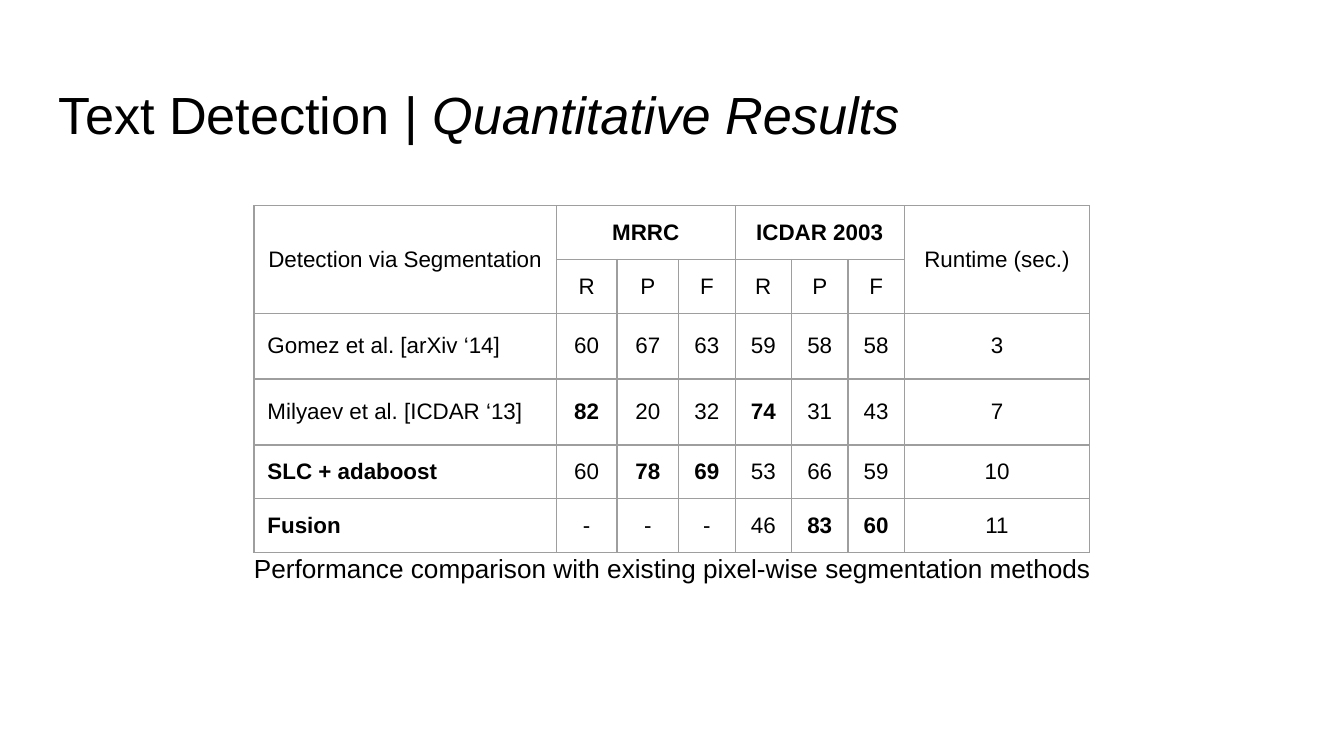
from pptx import Presentation
from pptx.dml.color import RGBColor as RGB
from pptx.enum.text import MSO_ANCHOR as ANCHOR, PP_ALIGN as ALIGN
from pptx.oxml import parse_xml
from pptx.oxml.ns import nsdecls
from pptx.text.text import Font
from pptx.util import Inches, Pt

COLORS = {"text": "000000", "border": "9E9E9E"}
FONT = "Arial"
PAD = Inches(0.1)
COLS = [2.25, 0.45, 0.46, 0.42, 0.42, 0.42, 0.42, 1.38]
ROWS = [0.34, 0.34, 0.49, 0.49, 0.34, 0.34]
THICK_SIDES = {3: "B", 4: "T"}  # the heavier rule separates earlier work from ours

# A leading * marks bold text
CELLS = [
    ["Detection via Segmentation", "*MRRC", "", "", "*ICDAR 2003", "", "", "Runtime (sec.)"],
    ["", "R", "P", "F", "R", "P", "F", ""],
    ["Gomez et al. [arXiv ‘14]", "60", "67", "63", "59", "58", "58", "3"],
    ["Milyaev et al. [ICDAR ‘13]", "*82", "20", "32", "*74", "31", "43", "7"],
    ["*SLC + adaboost", "60", "*78", "*69", "53", "66", "59", "10"],
    ["*Fusion", "-", "-", "-", "46", "*83", "*60", "11"],
]


def style(font, size, bold=False, italic=False):
    font.name, font.size, font.bold, font.italic = FONT, Pt(size), bold, italic
    font.color.rgb = RGB.from_string(COLORS["text"])


def add_text(x, y, w, h, size, align, anchor, parts):
    """Add a one-line text box; parts are (text, italic) pairs."""
    tf = s.shapes.add_textbox(Inches(x), Inches(y), Inches(w), Inches(h)).text_frame
    tf.word_wrap = True
    tf.vertical_anchor = anchor
    tf.margin_left = tf.margin_right = tf.margin_top = tf.margin_bottom = PAD
    p = tf.paragraphs[0]
    p.alignment = align
    for text, italic in parts:
        r = p.add_run()
        r.text = text
        style(r.font, size, italic=italic)


prs = Presentation()
prs.slide_width = Inches(10)
prs.slide_height = prs.slide_width * 9 // 16
s = prs.slides.add_slide(prs.slide_layouts[6])

add_text(0.34, 0.51, 9.32, 0.63, 28, ALIGN.LEFT, ANCHOR.TOP,
         [("Text Detection | ", False), ("Quantitative Results", True)])

table = s.shapes.add_table(len(ROWS), len(COLS), Inches(1.89), Inches(1.53),
                           Inches(sum(COLS)), Inches(sum(ROWS))).table
table.first_row = table.horz_banding = False
for col, width in zip(table.columns, COLS):
    col.width = Inches(width)
for row, height in zip(table.rows, ROWS):
    row.height = Inches(height)

for i, row in enumerate(CELLS):
    for j, text in enumerate(row):
        cell = table.cell(i, j)
        cell.vertical_anchor = ANCHOR.MIDDLE
        cell.margin_left = cell.margin_right = cell.margin_top = cell.margin_bottom = PAD
        cell.text_frame.text = text.lstrip("*")
        p = cell.text_frame.paragraphs[0]
        p.alignment = ALIGN.LEFT if j == 0 and i > 1 else ALIGN.CENTER
        for r in p.runs:
            style(r.font, 12, bold=text.startswith("*"))
        # The paragraph end counts towards the row height
        style(Font(p._p.get_or_add_endParaRPr()), 12)

        for side in "LRTB":
            width = Pt(1.5 if THICK_SIDES.get(i) == side else 0.75)
            cell._tc.get_or_add_tcPr().append(parse_xml(
                f'<a:ln{side} {nsdecls("a")} w="{width}"><a:solidFill>'
                f'<a:srgbClr val="{COLORS["border"]}"/></a:solidFill></a:ln{side}>'))
        cell.fill.background()

for top, left, bottom, right in [(0, 0, 1, 0), (0, 1, 0, 3), (0, 4, 0, 6), (0, 7, 1, 7)]:
    table.cell(top, left).merge(table.cell(bottom, right))

add_text(1.38, 4.07, 7.25, 0.32, 14, ALIGN.CENTER, ANCHOR.MIDDLE,
         [("Performance comparison with existing pixel-wise segmentation methods", False)])

prs.save("out.pptx")
